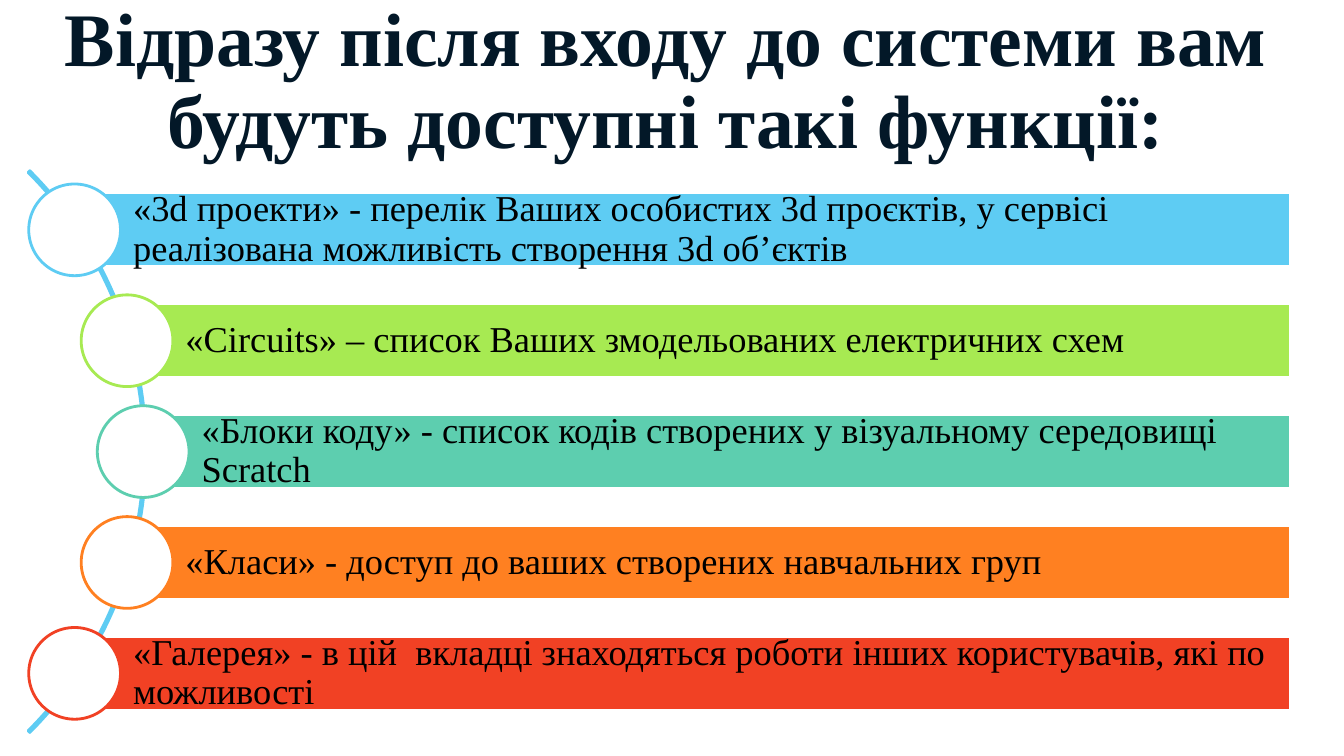
import math

import pptx
import pptx.dml.color
import pptx.enum.shapes
import pptx.enum.text
import pptx.util

Inches = pptx.util.Inches
Pt = pptx.util.Pt
RGB = pptx.dml.color.RGBColor.from_string
KIND = pptx.enum.shapes.MSO_SHAPE
ALIGN = pptx.enum.text.PP_ALIGN
MIDDLE = pptx.enum.text.MSO_ANCHOR.MIDDLE

HUES = {
    "sky": "5ECCF3",
    "lime": "A7EA52",
    "mint": "5DCEAF",
    "orange": "FF8021",
    "red": "F14124",
    "white": "FFFFFF",
    "black": "000000",
    "navy": "031828",
}
ITEMS = [
    ("sky", "«3d проекти» - перелік Ваших особистих 3d проєктів, у сервісі "
            "реалізована можливість створення 3d об’єктів"),
    ("lime", "«Circuits» – список Ваших змодельованих електричних схем"),
    ("mint", "«Блоки коду» - список кодів створених у візуальному середовищі Scratch"),
    ("orange", "«Класи» - доступ до ваших створених навчальних груп"),
    ("red", "«Галерея» - в цій  вкладці знаходяться роботи інших користувачів, "
            "які по можливості"),
]


def draw(kind, left, top, width, height, fill, line):
    shape = slide.shapes.add_shape(
        kind, Inches(left), Inches(top), Inches(width), Inches(height))
    shape.shadow.inherit = False
    if fill:
        shape.fill.solid()
        shape.fill.fore_color.rgb = RGB(HUES[fill])
    else:
        shape.fill.background()
    shape.line.color.rgb = RGB(HUES[line])
    shape.line.width = Pt(2)
    return shape


def write(shape, text, hue, align, pads, look):
    """Fill the shape with one wrapped paragraph; pads are left, top, right, bottom."""
    frame = shape.text_frame
    frame.word_wrap = True
    frame.vertical_anchor = MIDDLE
    for side, pad in zip(("left", "top", "right", "bottom"), pads):
        setattr(frame, f"margin_{side}", Inches(pad))
    para = frame.paragraphs[0]
    para.alignment = align
    para.line_spacing = 0.9
    run = para.add_run()
    run.text = text
    for key, value in look.items():
        setattr(run.font, key, value)
    run.font.color.rgb = RGB(HUES[hue])


deck = pptx.Presentation()
deck.slide_width = Inches(13.33)
deck.slide_height = Inches(7.5)
slide = deck.slides.add_slide(deck.slide_layouts[6])

title = slide.shapes.add_textbox(Inches(0.33), Inches(0.1), Inches(12.55), Inches(1.45))
write(title, "Відразу після входу до системи вам будуть доступні такі функції:",
      "navy", ALIGN.CENTER, (0.1, 0.05, 0.1, 0.05),
      {"name": "Times New Roman", "size": Pt(54), "bold": True})

# Adjustments: start angle, end angle, thickness
arc = draw(KIND.BLOCK_ARC, -6.43, 0.54, 7.88, 7.88, None, "sky")
for i, value in enumerate((189, 27, 0.003)):
    arc.adjustments[i] = value

# Each bar starts on the arc, with a dot centred there
MID_X, MID_Y, RADIUS = -2.48, 4.48, 3.9
STEP, RIGHT, BAR, DOT = 1.1, 12.8, 0.73, 0.91
for i, (hue, text) in enumerate(ITEMS):
    rise = (i - 2) * STEP
    x = round(MID_X + math.sqrt(RADIUS ** 2 - rise ** 2), 2)
    y = MID_Y + rise
    bar = draw(KIND.RECTANGLE, x, y - BAR / 2, RIGHT - x, BAR, hue, "white")
    write(bar, text, "black", ALIGN.LEFT, (0.58, 0.07, 0.07, 0.07),
          {"name": "Times New Roman", "size": Pt(26)})
    draw(KIND.OVAL, x - DOT / 2, y - DOT / 2, DOT, DOT, "white", hue)

deck.save("out.pptx")
